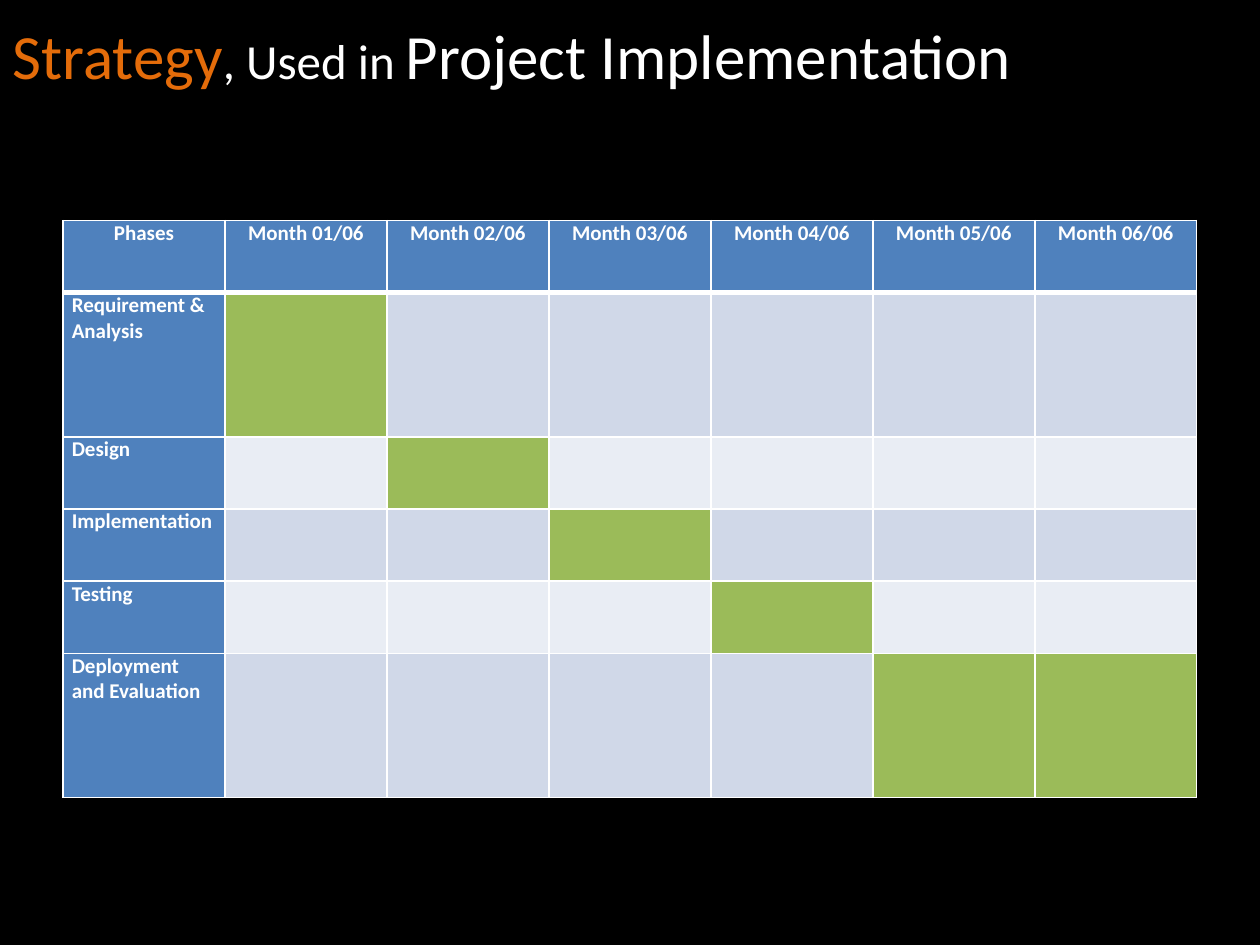
from lxml import etree
from pptx import Presentation
from pptx.dml.color import RGBColor
from pptx.enum.text import MSO_ANCHOR, PP_ALIGN
from pptx.oxml.ns import qn
from pptx.util import Inches, Pt

LEFT, CENTER = PP_ALIGN.LEFT, PP_ALIGN.CENTER
TOP, MIDDLE = MSO_ANCHOR.TOP, MSO_ANCHOR.MIDDLE

BLACK = RGBColor(0x00, 0x00, 0x00)
WHITE = RGBColor(0xFF, 0xFF, 0xFF)
ORANGE = RGBColor(0xE4, 0x6C, 0x0A)
BLUE = RGBColor(0x4F, 0x81, 0xBD)
GREEN = RGBColor(0x9B, 0xBB, 0x59)
BANDS = [RGBColor(0xD0, 0xD8, 0xE8), RGBColor(0xE9, 0xED, 0xF4)]

MONTHS = 6
# phase, height in row units, active months
PHASES = [
    ("Requirement & Analysis", 2, [1]),
    ("Design", 1, [2]),
    ("Implementation", 1, [3]),
    ("Testing", 1, [4]),
    ("Deployment and Evaluation", 2, [5, 6]),
]


def add_text(para, text, size=12, color=WHITE, bold=False, align=LEFT):
    para.alignment = align
    span = para.add_run()
    span.text = text
    span.font.name = "Calibri"
    span.font.size = Pt(size)
    span.font.bold = bold
    span.font.color.rgb = color


def add_border(cell, side, width):
    line = etree.SubElement(cell._tc.get_or_add_tcPr(), qn(f"a:ln{side}"), w=str(Pt(width)))
    fill = etree.SubElement(line, qn("a:solidFill"))
    etree.SubElement(fill, qn("a:srgbClr"), val=str(WHITE))


deck = Presentation()
deck.slide_width, deck.slide_height = Inches(10), Inches(7.5)
page = deck.slides.add_slide(deck.slide_layouts.get_by_name("Title Only"))
page.background.fill.solid()
page.background.fill.fore_color.rgb = BLACK

# Title
title = page.shapes.title
title.left, title.top = 0, Inches(0.08)
title.width, title.height = Inches(8.42), Inches(0.71)
title.text_frame.vertical_anchor = MIDDLE
heading = title.text_frame.paragraphs[0]
add_text(heading, "Strategy", size=36, color=ORANGE)
add_text(heading, ", Used in ", size=28)
add_text(heading, "Project Implementation", size=36)

# Schedule: equal columns, rows in whole units
row_units = [1] + [units for _, units, _ in PHASES]
width, height = Inches(9), Inches(4.58)
schedule = page.shapes.add_table(
    len(row_units), MONTHS + 1, Inches(0.5), Inches(1.75), width, height
).table
for column in schedule.columns:
    column.width = width // (MONTHS + 1)
for row, units in zip(schedule.rows, row_units):
    row.height = height * units // sum(row_units)

labels = ["Phases"] + [f"Month {month:02}/06" for month in range(1, MONTHS + 1)]
for row_index in range(len(row_units)):
    for month in range(MONTHS + 1):
        cell = schedule.cell(row_index, month)
        cell.margin_left = cell.margin_right = Inches(0.07)
        cell.margin_top = cell.margin_bottom = 0
        cell.vertical_anchor = TOP
        para = cell.text_frame.paragraphs[0]

        if row_index == 0:
            color = BLUE
            add_text(para, labels[month], bold=True, align=CENTER)
        else:
            phase, _, active_months = PHASES[row_index - 1]
            if month == 0:
                color = BLUE
                add_text(para, phase, bold=True)
            elif month in active_months:
                color = GREEN
            else:
                color = BANDS[(row_index - 1) % 2]

        add_border(cell, "L", 1)
        add_border(cell, "R", 1)
        add_border(cell, "T", 3 if row_index == 1 else 1)
        add_border(cell, "B", 3 if row_index == 0 else 1)
        cell.fill.solid()
        cell.fill.fore_color.rgb = color

deck.save("out.pptx")
